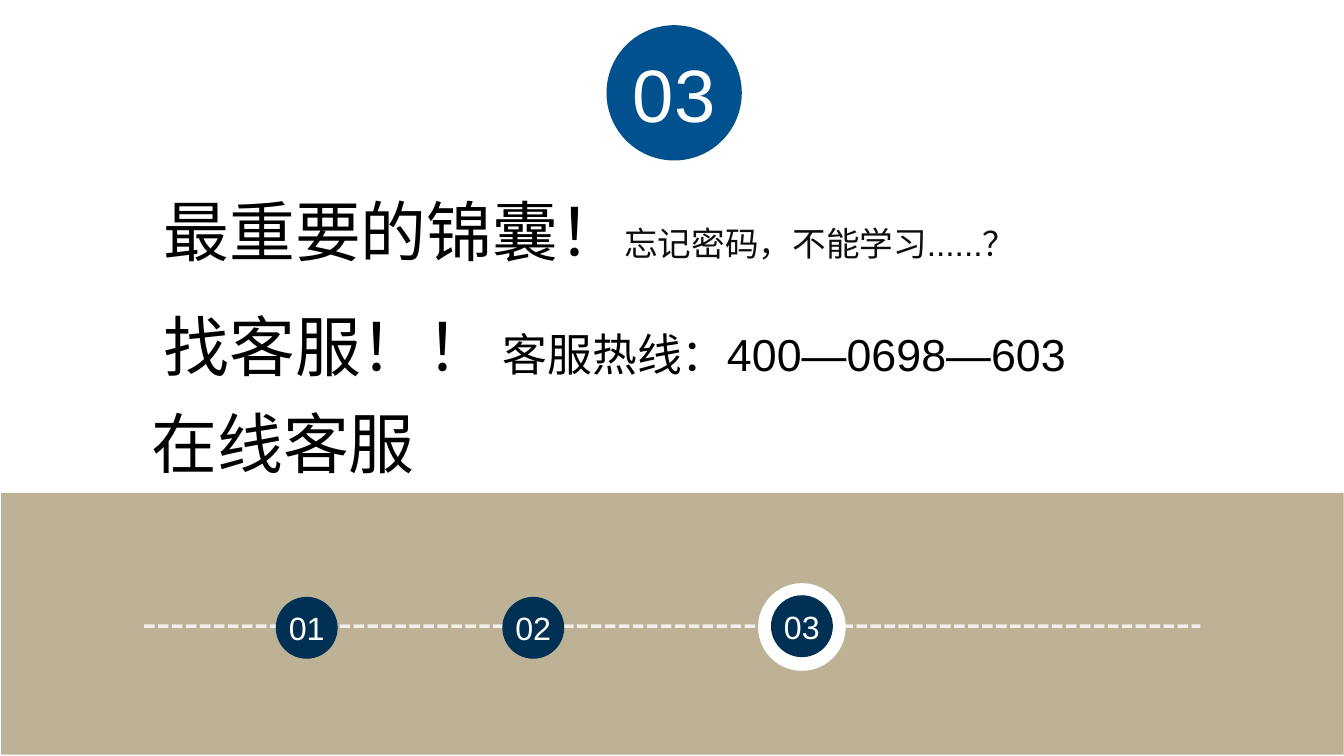
from lxml.etree import SubElement
from pptx import Presentation
from pptx.dml.color import RGBColor
from pptx.enum.dml import MSO_LINE
from pptx.enum.shapes import MSO_CONNECTOR, MSO_SHAPE
from pptx.enum.text import MSO_ANCHOR, PP_ALIGN
from pptx.oxml.ns import qn
from pptx.util import Cm, Pt

FONT = "Arial"
COLORS = {
    "white": "FFFFFF",
    "black": "000000",
    "charcoal": "0D0D0D",
    "sand": "BDB196",
    "navy": "003054",
    "blue": "00518E",
}


def rgb(name):
    return RGBColor.from_string(COLORS[name])


def add_run(p, text, size, color):
    r = p.add_run()
    r.text = text
    r.font.name = FONT
    r.font.size = Pt(size)
    r.font.color.rgb = rgb(color)


def fill_text(shape, runs, align=PP_ALIGN.LEFT, anchor=MSO_ANCHOR.TOP,
              inset=0.13, wrap=True):
    tf = shape.text_frame
    tf.word_wrap = wrap
    tf.vertical_anchor = anchor
    tf.margin_left = tf.margin_right = Cm(inset)
    tf.margin_top = tf.margin_bottom = Cm(inset)
    p = tf.paragraphs[0]
    p.alignment = align
    for run in runs:
        add_run(p, *run)


def add_block(s, kind, left, top, width, height, color):
    sp = s.shapes.add_shape(kind, Cm(left), Cm(top), Cm(width), Cm(height))
    sp.shadow.inherit = False
    sp.fill.solid()
    sp.fill.fore_color.rgb = rgb(color)
    sp.line.fill.background()
    return sp


def add_badge(s, center_x, center_y, diameter, color, number="", size=23):
    sp = add_block(s, MSO_SHAPE.OVAL, center_x - diameter / 2,
                   center_y - diameter / 2, diameter, diameter, color)
    if number:
        fill_text(sp, [(number, size, "white")], PP_ALIGN.CENTER,
                  MSO_ANCHOR.MIDDLE, 0, False)


def add_text(s, left, top, width, height, runs, **layout):
    box = s.shapes.add_textbox(Cm(left), Cm(top), Cm(width), Cm(height))
    fill_text(box, runs, **layout)


def add_title(s, left, top, width, height, runs):
    title = s.shapes.title
    title.left, title.top = Cm(left), Cm(top)
    title.width, title.height = Cm(width), Cm(height)
    fill_text(title, runs)


def add_dashed_line(s, x1, x2, y):
    line = s.shapes.add_connector(MSO_CONNECTOR.STRAIGHT,
                                  Cm(x1), Cm(y), Cm(x2), Cm(y))
    line.line.color.rgb = rgb("white")
    line.line.width = Pt(2.5)
    line.line.dash_style = MSO_LINE.SQUARE_DOT
    props = line.line._get_or_add_ln().getparent()
    color = props.find(".//" + qn("a:srgbClr"))
    SubElement(color, qn("a:alpha"), val="79000")
    SubElement(props, qn("a:effectLst"))


def main():
    prs = Presentation()
    prs.slide_width, prs.slide_height = Cm(33.87), Cm(19.05)
    s = prs.slides.add_slide(prs.slide_layouts[5])

    add_block(s, MSO_SHAPE.RECTANGLE, 0.03, 12.42, 33.83, 6.6, "sand")
    add_dashed_line(s, 3.63, 30.25, 15.78)
    add_badge(s, 20.21, 15.8, 2.21, "white")
    for number, x, y in (("01", 7.73, 15.82), ("02", 13.44, 15.82),
                         ("03", 20.21, 15.78)):
        add_badge(s, x, y, 1.56, "navy", number)
    add_badge(s, 16.99, 2.34, 3.41, "blue", "03", 53)

    add_title(s, 3.99, 4.67, 29, 2.24, [
        ("最重要的锦囊！", 47, "black"),
        ("忘记密码，不能学习......？", 24, "charcoal"),
    ])
    add_text(s, 3.99, 7.57, 25.68, 2.24, [
        ("找客服！！", 47, "black"),
        (" ", 32, "black"),
        ("客服热线：400—0698—603", 32, "black"),
    ])
    add_text(s, 2.9, 10.01, 8.48, 2.29, [("在线客服", 47, "black")],
             align=PP_ALIGN.CENTER, anchor=MSO_ANCHOR.MIDDLE)

    prs.save("out.pptx")


if __name__ == "__main__":
    main()
